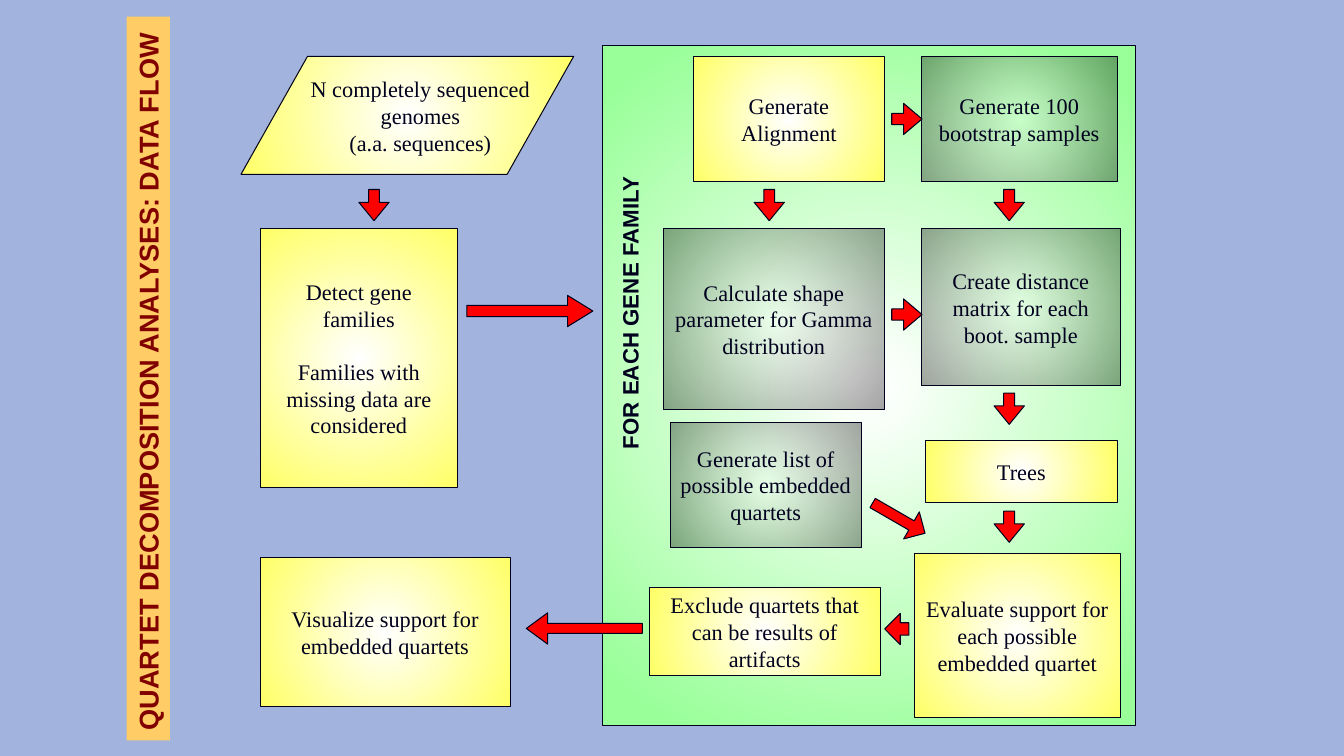
from lxml.etree import SubElement
from pptx import Presentation
from pptx.dml.color import RGBColor
from pptx.enum.shapes import MSO_SHAPE
from pptx.enum.text import MSO_ANCHOR, MSO_AUTO_SIZE, PP_ALIGN
from pptx.oxml.ns import qn
from pptx.util import Inches, Pt

INK = "00001E"
YELLOW = [(0, "FFFFFF", 100), (100, "FFFF66", 100)]
GREEN = [(2, "FFFFFF", 100), (91, "99FF99", 100)]
SHADE = [(0, "FFFFFF", 32), (100, "000000", 36)]

BODY = {"name": "Times New Roman", "size": Pt(15.9)}
LABEL = {"name": "Arial", "size": Pt(15.9), "bold": True}
TITLE = {"name": "Arial", "size": Pt(19.4), "bold": True}
MIDDLE = {"word_wrap": True, "vertical_anchor": MSO_ANCHOR.MIDDLE}
TIGHT = {"word_wrap": False, "vertical_anchor": MSO_ANCHOR.TOP,
         "auto_size": MSO_AUTO_SIZE.SHAPE_TO_FIT_TEXT}

STEPS = [
    ((2.58, 2.27, 1.96, 2.57), YELLOW,
     ["Detect gene families", "Families with missing data are considered"]),
    ((6.88, 0.56, 1.89, 1.24), YELLOW, ["Generate Alignment"]),
    ((6.58, 2.27, 2.19, 1.79), SHADE,
     ["Calculate shape parameter for Gamma distribution"]),
    ((9.14, 0.56, 1.94, 1.24), SHADE, ["Generate 100 bootstrap samples"]),
    ((9.14, 2.27, 1.97, 1.56), SHADE,
     ["Create distance matrix for each boot. sample"]),
    ((9.18, 4.37, 1.9, 0.62), YELLOW, ["Trees"]),
    ((6.65, 4.19, 1.89, 1.24), SHADE,
     ["Generate list of possible embedded quartets"]),
    ((9.07, 5.49, 2.04, 1.63), YELLOW,
     ["Evaluate support for each possible embedded quartet"]),
    ((2.58, 5.53, 2.48, 1.48), YELLOW,
     ["Visualize support for embedded quartets"]),
    ((6.44, 5.83, 2.29, 0.87), YELLOW,
     ["Exclude quartets that can be results of artifacts"]),
]

SHORT = (0.36, 0.61)
DOWN = [(3.56, 1.88), (7.48, 1.88), (9.86, 1.88), (9.86, 3.9), (9.86, 5.07)]
RIGHT = [(8.84, 1.03), (8.84, 2.97)]
TURNED = [
    ((8.76, 4.84, 0.31, 0.6), 300, (0.34, 0.5)),
    ((5.64, 5.66, 0.31, 1.15), 90, (0.32, 0.68)),
    ((5.1, 2.46, 0.31, 1.25), 270, (0.36, 0.81)),
    ((8.74, 6.12, 0.31, 0.24), 90, (0.4, 0.64)),
]


def color(code):
    return RGBColor.from_string(code)


def style(item, form):
    for key, value in form.items():
        setattr(item, key, value)


def solid(fill, code):
    fill.solid()
    fill.fore_color.rgb = color(code)


def glow(shape, stops):
    shape.fill.gradient()
    grad = shape.element.spPr.find(qn("a:gradFill"))
    for child in list(grad):
        grad.remove(child)
    group = SubElement(grad, qn("a:gsLst"))
    for place, code, alpha in stops:
        stop = SubElement(group, qn("a:gs"), pos=str(place * 1000))
        tint = SubElement(stop, qn("a:srgbClr"), val=code)
        if alpha < 100:
            SubElement(tint, qn("a:alpha"), val=str(alpha * 1000))
    focus = SubElement(grad, qn("a:path"), path="circle")
    SubElement(focus, qn("a:fillToRect"),
               {side: "50000" for side in "ltrb"})


def add_form(slide, kind, box):
    shape = slide.shapes.add_shape(kind, *map(Inches, box))
    shape.shadow.inherit = False
    shape.line.width = Pt(0.75)
    solid(shape.line.fill, INK)
    return shape


def add_panel(slide, kind, box, stops):
    shape = add_form(slide, kind, box)
    glow(shape, stops)
    return shape


def write(shape, lines, font, frame, align, code=INK, gap=0):
    text = shape.text_frame
    style(text, frame)
    for index, line in enumerate(lines):
        para = text.add_paragraph() if index else text.paragraphs[0]
        para.alignment = align
        para.space_before = Pt(gap if index else 0)
        run = para.add_run()
        run.text = line
        style(run.font, font)
        run.font.color.rgb = color(code)


def add_arrow(slide, box, turn=0, adjust=SHORT):
    shape = add_form(slide, MSO_SHAPE.DOWN_ARROW, box)
    solid(shape.fill, "FF0000")
    shape.rotation = turn
    for index, value in enumerate(adjust):
        shape.adjustments[index] = value


def add_label(slide, box, line, font, code, back=None):
    shape = slide.shapes.add_textbox(*map(Inches, box))
    shape.rotation = 270
    if back:
        solid(shape.fill, back)
    write(shape, [line], font, TIGHT, PP_ALIGN.LEFT, code)


def main():
    deck = Presentation()
    deck.slide_width, deck.slide_height = Inches(13.33), Inches(7.5)
    slide = deck.slides.add_slide(deck.slide_layouts[6])
    solid(slide.background.fill, "A2B3DD")

    add_panel(slide, MSO_SHAPE.FLOWCHART_DATA, (2.39, 0.56, 3.3, 1.17), YELLOW)
    add_label(slide, (-2.12, 3.54, 7.18, 0.43),
              "QUARTET DECOMPOSITION ANALYSES: DATA FLOW",
              TITLE, "800000", "FFCC66")
    note = slide.shapes.add_textbox(*map(Inches, (2.85, 0.56, 2.64, 1.17)))
    write(note, ["N completely sequenced genomes", "(a.a. sequences)"],
          BODY, MIDDLE, PP_ALIGN.CENTER)

    add_panel(slide, MSO_SHAPE.RECTANGLE, (5.98, 0.45, 5.28, 6.75), GREEN)
    add_label(slide, (4.79, 2.91, 2.92, 0.37), "FOR EACH GENE FAMILY",
              LABEL, INK)
    for box, stops, lines in STEPS:
        step = add_panel(slide, MSO_SHAPE.RECTANGLE, box, stops)
        write(step, lines, BODY, MIDDLE, PP_ALIGN.CENTER, gap=19)

    for left, top in DOWN:
        add_arrow(slide, (left, top, 0.3, 0.31))
    for left, top in RIGHT:
        add_arrow(slide, (left, top, 0.31, 0.3), 270)
    for box, turn, adjust in TURNED:
        add_arrow(slide, box, turn, adjust)
    deck.save("out.pptx")


if __name__ == "__main__":
    main()
